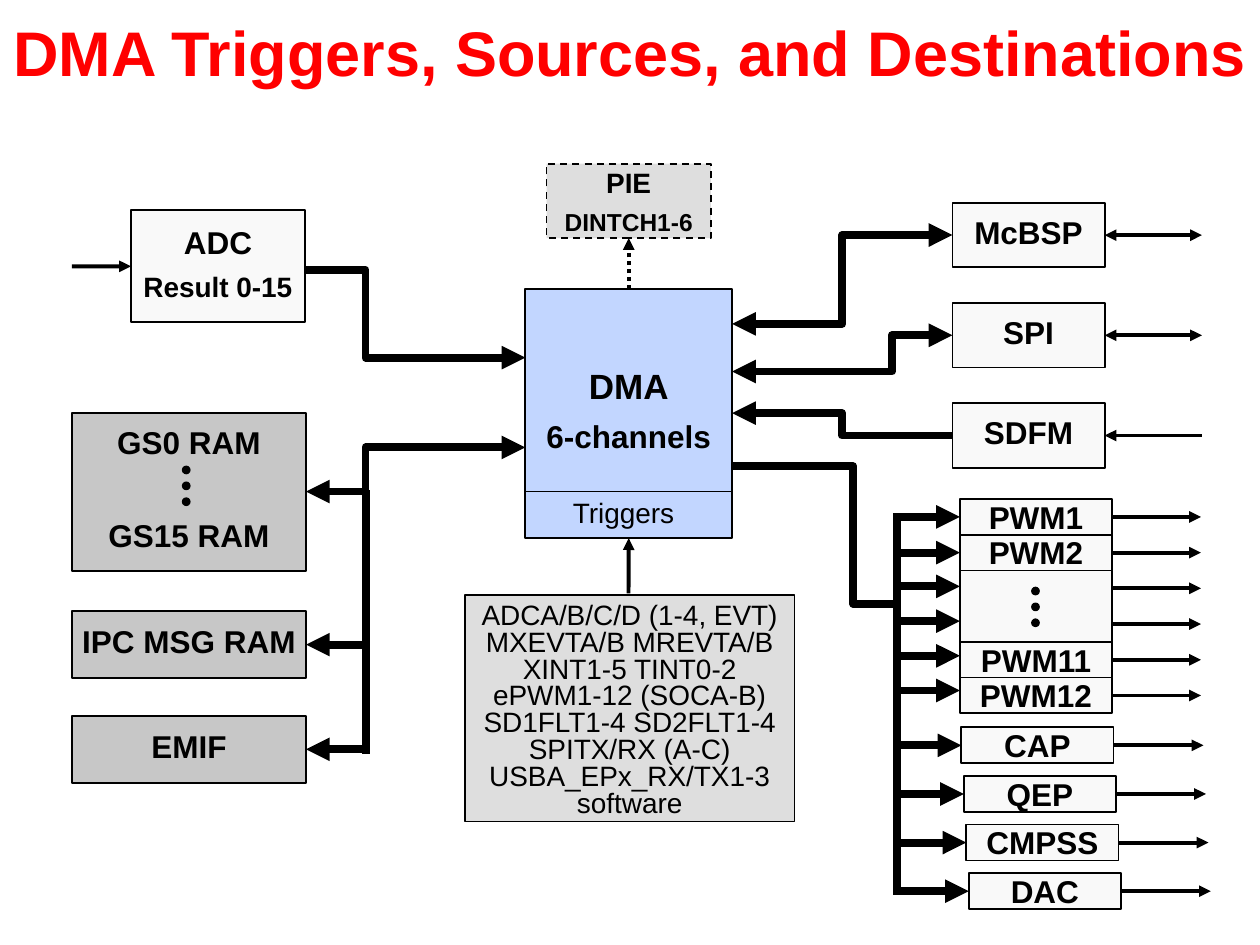
"""Build the slide on DMA triggers, sources and destinations."""
from pptx import Presentation
from pptx.dml.color import RGBColor
from pptx.enum.dml import MSO_LINE
from pptx.enum.shapes import MSO_CONNECTOR, MSO_SHAPE
from pptx.enum.text import MSO_ANCHOR, MSO_AUTO_SIZE, PP_ALIGN
from pptx.oxml.xmlchemy import OxmlElement
from pptx.util import Cm, Pt

RED = RGBColor(0xFF, 0x00, 0x00)
BLACK = RGBColor(0x00, 0x00, 0x00)
WHITE = RGBColor(0xF9, 0xF9, 0xF9)
BLUE = RGBColor(0xC2, 0xD6, 0xFF)
PALE = RGBColor(0xDE, 0xDE, 0xDE)
GRAY = RGBColor(0xC7, 0xC7, 0xC7)
RECT, OVAL = MSO_SHAPE.RECTANGLE, MSO_SHAPE.OVAL
LINE, ELBOW = MSO_CONNECTOR.STRAIGHT, MSO_CONNECTOR.ELBOW
DASH, DOTS = MSO_LINE.DASH, MSO_LINE.ROUND_DOT
LEFT, MID = PP_ALIGN.LEFT, PP_ALIGN.CENTER
TOP, CENTER = MSO_ANCHOR.TOP, MSO_ANCHOR.MIDDLE
FIXED = MSO_AUTO_SIZE.NONE
THIN, THICK = 2.25, 4.5

deck = Presentation()
deck.slide_width, deck.slide_height = Cm(25.4), Cm(19.05)
slide = deck.slides.add_slide(deck.slide_layouts[5])
shapes = slide.shapes


def write(shape, text, sizes=(18,), bold=True, color=BLACK, align=MID,
          anchor=CENTER, gap=0, space=0.8, inset=None):
    frame = shape.text_frame
    frame.text = text
    frame.auto_size = FIXED
    frame.word_wrap = False
    frame.vertical_anchor = anchor
    if inset:
        frame.margin_top, frame.margin_bottom = Cm(inset[0]), Cm(inset[1])
    for i, para in enumerate(frame.paragraphs):
        para.alignment = align
        para.line_spacing = space
        para.space_before = Pt(gap if i else 0)
        font = para.font
        font.name, font.bold = "Arial", bold
        font.size = Pt(sizes[min(i, len(sizes) - 1)])
        font.color.rgb = color


def link(*points, width=THICK, head=False, tail=False, dash=None,
         kind=LINE, start=None, end=None):
    spots = [(Cm(x), Cm(y)) for x, y in points]
    if len(spots) == 2:
        wire = shapes.add_connector(kind, *spots[0], *spots[1])
        if start:
            wire.begin_connect(*start)
        if end:
            wire.end_connect(*end)
    else:
        pen = shapes.build_freeform(*spots[0])
        pen.add_line_segments(spots[1:], close=False)
        wire = pen.convert_to_shape()
        wire.fill.background()
    wire.line.color.rgb = BLACK
    wire.line.width = Pt(width)
    if dash:
        wire.line.dash_style = dash
    props = wire.element.spPr
    for tag, shown in (("a:headEnd", head), ("a:tailEnd", tail)):
        if shown:
            tip = OxmlElement(tag)
            tip.set("type", "triangle")
            props.find("{*}ln").append(tip)
    props.append(OxmlElement("a:effectLst"))


title = shapes.title
title.left, title.top, title.width, title.height = Cm(0), Cm(0), Cm(25.4), Cm(2.06)
write(title, "DMA Triggers, Sources, and Destinations", sizes=(36,), color=RED, space=1.0)

EVENTS = """ADCA/B/C/D (1-4, EVT)
MXEVTA/B MREVTA/B
XINT1-5 TINT0-2
ePWM1-12 (SOCA-B)
SD1FLT1-4 SD2FLT1-4
SPITX/RX (A-C)
USBA_EPx_RX/TX1-3
software"""
LOW = {"inset": (0.13, 0)}
PORTS = ("McBSP", "SPI", "SDFM")
UNITS = ("CAP", "QEP", "CMPSS", "DAC")

plan = [
    ("DMA\n6-channels", 10.59, 5.82, 4.17, 5.03, BLUE, {"sizes": (20, 18), "gap": 10}),
    ("ADC\nResult 0-15", 2.64, 4.24, 3.51, 2.26, WHITE, {"sizes": (18, 16), "gap": 9}),
    ("PIE\nDINTCH1-6", 11.02, 3.3, 3.31, 1.5, PALE, {"sizes": (16, 14), "gap": 8, **LOW}),
    ("GS0 RAM\nGS15 RAM", 1.45, 8.33, 4.72, 3.18, GRAY, {"gap": 36}),
    ("IPC MSG RAM", 1.45, 12.32, 4.72, 1.35, GRAY, {}),
    ("EMIF", 1.45, 14.43, 4.72, 1.35, GRAY, {}),
    (EVENTS, 9.37, 11.99, 6.65, 4.57, PALE, {"sizes": (16,), "bold": False, **LOW}),
    ("", 19.35, 11.5, 3.07, 1.44, WHITE, {}),
]
plan += [(name, 19.2, 4.09 + 2.02 * i, 3.07, 1.3, WHITE, {})
         for i, name in enumerate(PORTS)]
plan += [(f"PWM{n}", 19.35, 10.06 + 0.72 * row, 3.07, 0.72, WHITE, LOW)
         for n, row in ((1, 0), (2, 1), (11, 4), (12, 5))]
plan += [(name, 19.38 + 0.05 * i, 14.66 + 0.98 * i, 3.07, 0.73, WHITE, LOW)
         for i, name in enumerate(UNITS)]

boxes = {}
for text, x, y, wide, high, fill, look in plan:
    box = shapes.add_shape(RECT, Cm(x), Cm(y), Cm(wide), Cm(high))
    box.shadow.inherit = False
    box.fill.solid()
    box.fill.fore_color.rgb = fill
    box.line.color.rgb = BLACK
    box.line.width = Pt(1)
    if text:
        write(box, text, **look)
    boxes[text.split("\n")[0]] = box
dma, pie, adc = boxes["DMA"], boxes["PIE"], boxes["ADC"]
pie.line.dash_style = DASH

label = shapes.add_textbox(Cm(11.3), Cm(10), Cm(2.59), Cm(0.79))
write(label, "Triggers", sizes=(16,), bold=False, align=LEFT, anchor=TOP)

for x, y in ((3.68, 9.4), (20.8, 11.84)):
    for i in range(3):
        dot = shapes.add_shape(OVAL, Cm(x), Cm(y + 0.32 * i), Cm(0.15), Cm(0.15))
        dot.shadow.inherit = False
        dot.fill.solid()
        dot.fill.fore_color.rgb = BLACK
        dot.line.color.rgb = BLACK
        dot.line.width = Pt(0.75)

link((10.59, 9.91), (14.76, 9.91), width=1)
link((12.67, 11.96), (12.67, 10.85), width=THIN, tail=True, end=(dma, 2))
link((12.67, 5.82), (12.67, 4.8), width=THIN, tail=True, dash=DOTS,
     start=(dma, 0), end=(pie, 2))
link((1.45, 5.37), (2.64, 5.37), width=THIN, tail=True, end=(adc, 1))

link((7.37, 9.88), (7.37, 15.19))
link((18.08, 10.36), (18.08, 17.98))
link((6.15, 5.44), (7.37, 5.44), (7.37, 7.21), (10.59, 7.21), tail=True)
link((6.17, 9.91), (7.37, 9.91), (7.37, 9.02), (10.59, 9.02), head=True, tail=True)
link((18.11, 12.17), (17.2, 12.17), (17.2, 9.4), (14.76, 9.4))
link((14.76, 7.49), (17.98, 7.49), (17.98, 6.76), (19.2, 6.76), head=True, tail=True)
link((14.76, 6.53), (19.2, 4.74), kind=ELBOW, head=True, tail=True)
link((19.2, 8.78), (14.76, 8.33), kind=ELBOW, tail=True)

for name in ("IPC MSG RAM", "EMIF"):
    box = boxes[name]
    y = box.top.cm + box.height.cm / 2
    link((6.17, y), (7.42, y), head=True, start=(box, 3))

for name in PORTS:
    box = boxes[name]
    y = box.top.cm + box.height.cm / 2
    link((22.27, y), (24.23, y), width=THIN, head=True, tail=name != "SDFM",
         start=(box, 3))

for i, name in enumerate(("PWM1", "PWM2", None, None, "PWM11", "PWM12")):
    box = boxes.get(name)
    y = 10.42 + 0.72 * i
    link((22.42, y), (24.21, y), width=THIN, tail=True, start=box and (box, 3))
    y = y if i < 2 else 10.42 + 0.7 * i
    link((18.01, y), (19.35, y), tail=True, end=(box, 1) if i < 2 else None)

for i, name in enumerate(UNITS):
    box = boxes[name]
    x, y = box.left.cm, box.top.cm + box.height.cm / 2
    link((18.01, y), (x, y), tail=True, end=(box, 1))
    link((x + 3.07, y), (x + 4.88, y), width=THIN, tail=True, start=(box, 3))

deck.save("out.pptx")
